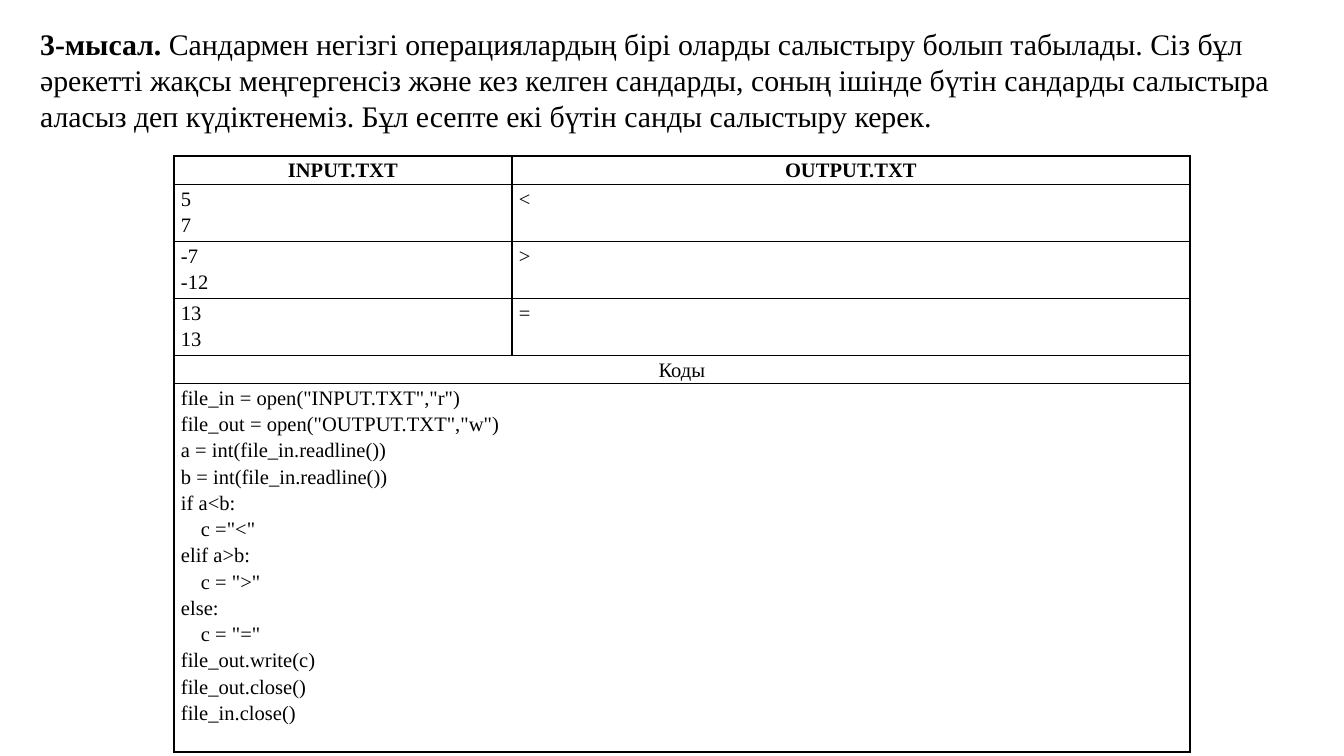
from lxml import etree
from pptx import Presentation
from pptx import util as u
from pptx.dml import color
from pptx.enum import text
from pptx.oxml import ns

PX = 914400 / 134.4
COLORS = {"ink": "000000", "paper": "FFFFFF"}
FONT = "Times New Roman"
INDENT = 20

INTRO = (
    "Сандармен негізгі операциялардың бірі оларды салыстыру болып табылады. "
    "Сіз бұл әрекетті жақсы меңгергенсіз және кез келген сандарды, соның ішінде "
    "бүтін сандарды салыстыра аласыз деп күдіктенеміз. "
    "Бұл есепте екі бүтін санды салыстыру керек."
)
EXAMPLES = [("5\n7", "<"), ("-7\n-12", ">"), ("13\n13", "=")]
# A leading tab marks an indented line
CODE = """file_in = open("INPUT.TXT","r")
file_out = open("OUTPUT.TXT","w")
a = int(file_in.readline())
b = int(file_in.readline())
if a<b:
\tc ="<"
elif a>b:
\tc = ">"
else:
\tc = "="
file_out.write(c)
file_out.close()
file_in.close()"""


def px(length):
    return u.Emu(round(length * PX))


def rgb(name):
    return color.RGBColor.from_string(COLORS[name])


def add_text(paragraph, content, size=11, bold=False, ink="ink"):
    run = paragraph.add_run()
    run.text = content
    run.font.name = FONT
    run.font.size = u.Pt(size)
    run.font.bold = bold
    run.font.color.rgb = rgb(ink)


class SlideBuilder:
    def __init__(self, slide):
        self.slide = slide

    def text_box(self, left, top, width, height, runs, size):
        shape = self.slide.shapes.add_textbox(px(left), px(top), px(width), px(height))
        frame = shape.text_frame
        frame.word_wrap = True
        frame.auto_size = text.MSO_AUTO_SIZE.SHAPE_TO_FIT_TEXT
        for content, bold in runs:
            add_text(frame.paragraphs[0], content, size=size, bold=bold)

    def table(self, left, top, columns, rows):
        shape = self.slide.shapes.add_table(
            len(rows), len(columns), px(left), px(top), px(sum(columns)), px(sum(rows)))
        table = shape.table
        table.first_row = table.horz_banding = False
        for column, width in zip(table.columns, columns):
            column.width = px(width)
        for row, height in zip(table.rows, rows):
            row.height = px(height)
        for cell in table.iter_cells():
            self.style_cell(cell)
        return table

    def style_cell(self, cell):
        cell.margin_left = cell.margin_right = px(7)
        cell.margin_top = cell.margin_bottom = 0
        properties = cell._tc.get_or_add_tcPr()
        for side in ("lnL", "lnR", "lnT", "lnB"):
            line = etree.SubElement(properties, ns.qn(f"a:{side}"), w=str(u.Pt(1)))
            fill = etree.SubElement(line, ns.qn("a:solidFill"))
            etree.SubElement(fill, ns.qn("a:srgbClr"), val=COLORS["ink"])
        cell.fill.solid()
        cell.fill.fore_color.rgb = rgb("paper")

    def cell_text(self, cell, content, bold=False, centered=False):
        frame = cell.text_frame
        for index, line in enumerate(content.split("\n")):
            paragraph = frame.add_paragraph() if index else frame.paragraphs[0]
            paragraph.line_spacing = 1.15
            paragraph.alignment = text.PP_ALIGN.CENTER if centered else text.PP_ALIGN.LEFT
            if line.startswith("\t"):
                paragraph._p.get_or_add_pPr().set("marL", str(px(INDENT)))
            add_text(paragraph, line.strip(), bold=bold)


def main():
    presentation = Presentation()
    presentation.slide_width = px(1344)
    presentation.slide_height = px(756)
    slide = presentation.slides.add_slide(presentation.slide_layouts[6])
    builder = SlideBuilder(slide)

    # Task statement
    builder.text_box(27, 19, 1317, 122, [("3-мысал. ", True), (INTRO, False)], size=16)

    # Table of examples
    table = builder.table(174, 156, [338, 678], [28, 57, 57, 57, 28, 368])
    for column, heading in enumerate(("INPUT.TXT", "OUTPUT.TXT")):
        builder.cell_text(table.cell(0, column), heading, bold=True, centered=True)
    for row, example in enumerate(EXAMPLES, start=1):
        for column, value in enumerate(example):
            builder.cell_text(table.cell(row, column), value)

    # Code across both columns
    for row, content, centered in ((4, "Коды", True), (5, CODE, False)):
        table.cell(row, 0).merge(table.cell(row, 1))
        builder.cell_text(table.cell(row, 0), content, centered=centered)

    presentation.save("out.pptx")


if __name__ == "__main__":
    main()
